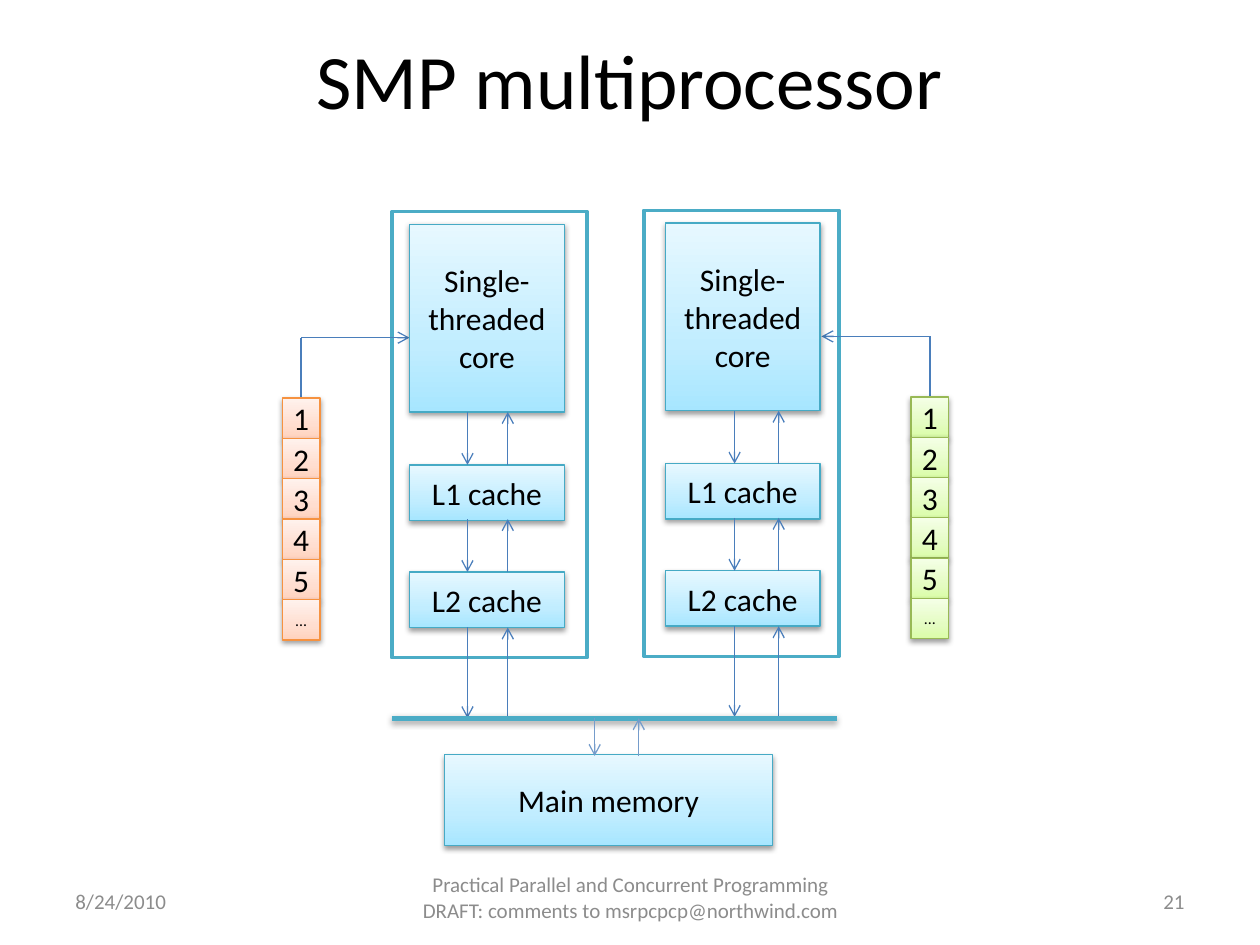
from copy import deepcopy
from dataclasses import dataclass

import pptx
import pptx.dml.color
import pptx.enum.shapes
import pptx.enum.text
import pptx.oxml
import pptx.oxml.ns
import pptx.presentation
import pptx.shapes.autoshape
import pptx.shapes.connector
import pptx.slide
import pptx.text.text
import pptx.util

Inches = pptx.util.Inches
Pt = pptx.util.Pt
Align = pptx.enum.text.PP_ALIGN
Shape = pptx.shapes.autoshape.Shape
Connector = pptx.shapes.connector.Connector
Slide = pptx.slide.Slide


@dataclass(frozen=True)
class Palette:
    line: str
    stops: tuple[str, str, str]


@dataclass(frozen=True)
class Theme:
    font: str = "Calibri"
    text: str = "000000"
    muted: str = "8C8C8C"
    background: str = "FFFFFF"
    accent: str = "4BACC6"
    arrow: str = "4A7EBB"
    pale_arrow: str = "759CCB"
    blue: Palette = Palette("46AAC5", ("A7E6FF", "C1EDFF", "E7F8FF"))
    orange: Palette = Palette("F69240", ("FFD2BD", "FFDED0", "FFF2ED"))
    green: Palette = Palette("98B955", ("DAFDA7", "E4FCC2", "F5FFE7"))
    title_size: int = 44
    body_size: int = 18
    footer_size: int = 12
    dots_size: int = 9
    thin: float = 0.75
    frame: float = 2
    bus: float = 3


@dataclass(frozen=True)
class Box:
    left: float
    top: float
    width: float
    height: float

    def lengths(self) -> tuple[int, ...]:
        return tuple(Inches(value) for value in (self.left, self.top, self.width, self.height))


@dataclass(frozen=True)
class Processor:
    frame_left: float
    left: float
    shift: float
    down: float
    up: float


@dataclass(frozen=True)
class Thread:
    left: float
    top: float
    elbow: float
    core_side: float
    palette: Palette


@dataclass(frozen=True)
class FooterItem:
    text: str
    box: Box
    alignment: Align


THEME = Theme()
CELL_WIDTH, CELL_HEIGHT = 0.3, 0.32
BLOCK_WIDTH = 1.23
BUS_TOP = 5.7
INSTRUCTIONS = ("1", "2", "3", "4", "5", "...")
BLOCKS = (("Single-threaded\vcore", 1.78, 1.49), ("L1 cache", 3.69, 0.44), ("L2 cache", 4.54, 0.44))
LINKS = ((3.27, 3.69), (4.12, 4.54), (4.98, BUS_TOP))
PROCESSORS = (Processor(3.11, 3.25, 0, 3.71, 4.03), Processor(5.11, 5.28, -0.01, 5.83, 6.18))
THREADS = (
    Thread(2.24, 3.16, 2.68, 3.25, THEME.orange),
    Thread(7.23, 3.15, 2.67, 6.52, THEME.green),
)
FOOTER = (
    FooterItem("8/24/2010", Box(0.5, 6.95, 2.33, 0.4), Align.LEFT),
    FooterItem(
        "Practical Parallel and Concurrent Programming DRAFT: comments to msrpcpcp@northwind.com",
        Box(3.17, 6.92, 3.67, 0.4),
        Align.CENTER,
    ),
    FooterItem("21", Box(7.17, 6.95, 2.33, 0.4), Align.RIGHT),
)


def color(value: str) -> pptx.dml.color.RGBColor:
    return pptx.dml.color.RGBColor.from_string(value)


def write(frame: pptx.text.text.TextFrame, text: str, size: float, ink: str = THEME.text,
          alignment: Align = Align.CENTER) -> None:
    frame.text = text
    frame.word_wrap = True
    frame.vertical_anchor = pptx.enum.text.MSO_ANCHOR.MIDDLE
    paragraph = frame.paragraphs[0]
    paragraph.alignment = alignment
    for run in paragraph.runs:
        for name, value in {"name": THEME.font, "size": Pt(size)}.items():
            setattr(run.font, name, value)
        run.font.color.rgb = color(ink)


def add_shadow(shape: Shape | Connector, opacity: int) -> None:
    namespace = pptx.oxml.ns.nsdecls("a")
    effects = shape._element.spPr.find(pptx.oxml.ns.qn("a:effectLst"))
    effects.append(pptx.oxml.parse_xml(
        f'<a:outerShdw {namespace} blurRad="40000" dist="20000" dir="5400000" rotWithShape="0">'
        f'<a:srgbClr val="000000"><a:alpha val="{opacity * 1000}"/></a:srgbClr></a:outerShdw>'))


def add_rectangle(slide: Slide, box: Box, line: str, width: float) -> Shape:
    shape = slide.shapes.add_shape(pptx.enum.shapes.MSO_SHAPE.RECTANGLE, *box.lengths())
    shape.fill.solid()
    shape.fill.fore_color.rgb = color(THEME.background)
    shape.line.color.rgb = color(line)
    shape.line.width = Pt(width)
    shape.shadow.inherit = False
    return shape


def add_block(slide: Slide, box: Box, text: str, palette: Palette = THEME.blue,
              size: float = THEME.body_size) -> Shape:
    shape = add_rectangle(slide, box, palette.line, THEME.thin)
    shape.fill.gradient()
    shape.fill.gradient_angle = 90
    stops = shape._element.spPr.find(".//" + pptx.oxml.ns.qn("a:gsLst"))
    stops.append(deepcopy(stops[-1]))
    for stop, position, value in zip(shape.fill.gradient_stops, (0, 0.35, 1), palette.stops):
        stop.position = position
        stop.color.rgb = color(value)
    add_shadow(shape, 38)
    for side in ("left", "right", "top", "bottom"):
        setattr(shape.text_frame, f"margin_{side}", 0)
    write(shape.text_frame, text, size)
    return shape


def add_line(slide: Slide, start: tuple[float, float], end: tuple[float, float],
             ink: str = THEME.arrow, width: float = THEME.thin, arrow: bool = True) -> Connector:
    points = [Inches(value) for value in (*start, *end)]
    connector = slide.shapes.add_connector(pptx.enum.shapes.MSO_CONNECTOR.STRAIGHT, *points)
    connector.line.color.rgb = color(ink)
    connector.line.width = Pt(width)
    namespace = pptx.oxml.ns.nsdecls("a")
    if arrow:
        connector.line._get_or_add_ln().append(
            pptx.oxml.parse_xml(f'<a:tailEnd {namespace} type="arrow"/>'))
    connector._element.spPr.append(pptx.oxml.parse_xml(f"<a:effectLst {namespace}/>"))
    return connector


def add_exchange(slide: Slide, down: float, up: float, top: float, bottom: float,
                 ink: str = THEME.arrow) -> None:
    add_line(slide, (down, top), (down, bottom), ink)
    add_line(slide, (up, bottom), (up, top), ink)


def add_processor(slide: Slide, processor: Processor) -> None:
    for text, top, height in BLOCKS:
        add_block(slide, Box(processor.left, top + processor.shift, BLOCK_WIDTH, height), text)
    for top, bottom in LINKS:
        add_exchange(slide, processor.down, processor.up, top + processor.shift, bottom + processor.shift)


def add_thread(slide: Slide, thread: Thread) -> None:
    middle = thread.left + CELL_WIDTH / 2
    last_top = thread.top + CELL_HEIGHT * (len(INSTRUCTIONS) - 1)
    stem = add_line(slide, (middle, last_top), (middle, thread.elbow), arrow=False)
    for index, text in enumerate(INSTRUCTIONS):
        box = Box(thread.left, thread.top + index * CELL_HEIGHT, CELL_WIDTH, CELL_HEIGHT)
        size = THEME.body_size if text.isdigit() else THEME.dots_size
        cell = add_block(slide, box, text, thread.palette, size)
    stem.begin_connect(cell, 0)
    add_line(slide, (middle, thread.elbow), (thread.core_side, thread.elbow))


def main() -> None:
    presentation = pptx.Presentation()
    presentation.slide_width, presentation.slide_height = Inches(10), Inches(7.5)
    slide = presentation.slides.add_slide(presentation.slide_layouts[5])
    title = slide.shapes.title
    for name, value in zip(("left", "top", "width", "height"), Box(0.5, 0, 9, 1.25).lengths()):
        setattr(title, name, value)
    write(title.text_frame, "SMP multiprocessor", THEME.title_size)
    for processor in PROCESSORS:
        frame = Box(processor.frame_left, 1.68 + processor.shift, 1.55, 3.54)
        add_rectangle(slide, frame, THEME.accent, THEME.frame)
    for thread in THREADS:
        add_thread(slide, thread)
    for processor in PROCESSORS:
        add_processor(slide, processor)
    bus = add_line(slide, (3.11, BUS_TOP), (6.64, BUS_TOP), THEME.accent, THEME.bus, arrow=False)
    add_shadow(bus, 35)
    add_block(slide, Box(3.53, 5.99, 2.6, 0.72), "Main memory")
    add_exchange(slide, 4.72, 5.07, BUS_TOP, 6, THEME.pale_arrow)
    for item in FOOTER:
        text_box = slide.shapes.add_textbox(*item.box.lengths())
        write(text_box.text_frame, item.text, THEME.footer_size, THEME.muted, item.alignment)
    presentation.save("out.pptx")


if __name__ == "__main__":
    main()
